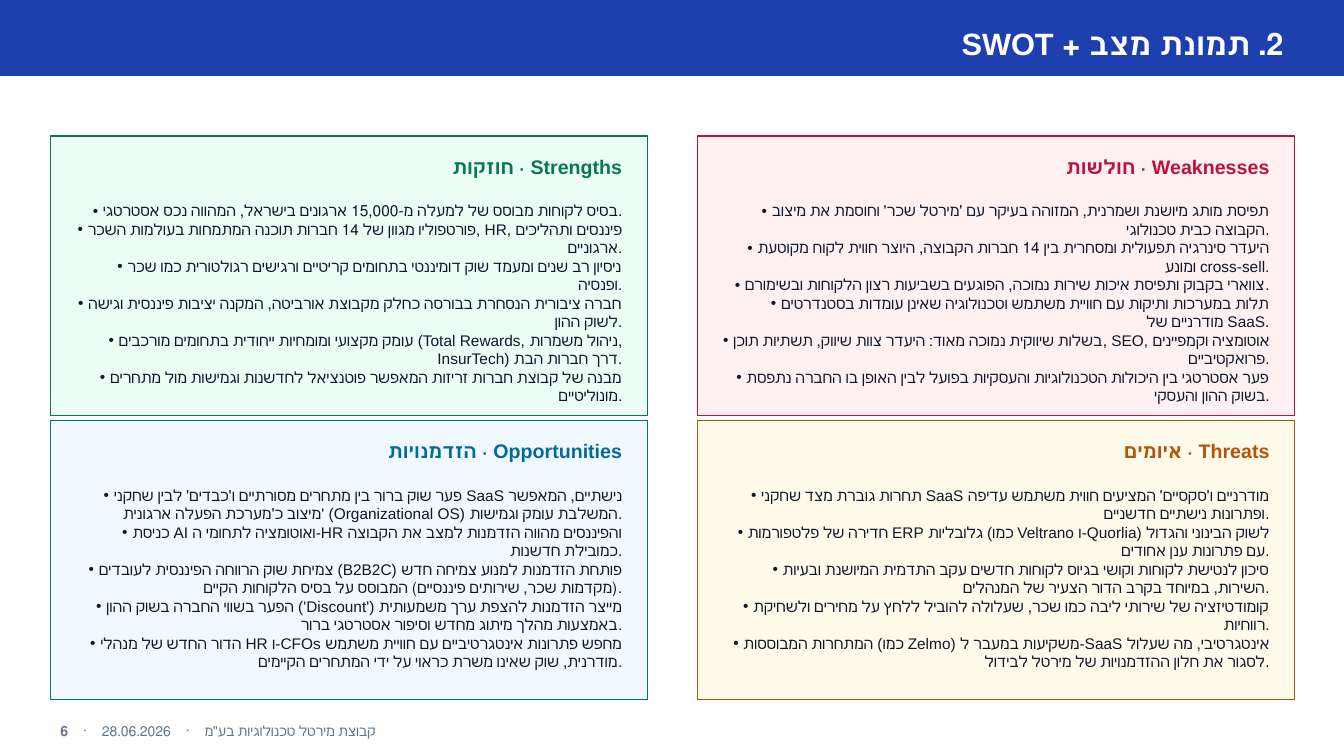
"""Build the SWOT slide: a title bar, four quadrants and a footer."""
from dataclasses import dataclass

from lxml import etree
from pptx import Presentation
from pptx.dml.color import RGBColor
from pptx.enum.shapes import MSO_SHAPE as Preset
from pptx.enum.text import MSO_ANCHOR as Anchor, MSO_AUTO_SIZE as AutoSize, PP_ALIGN as Align
from pptx.oxml.ns import qn
from pptx.util import Inches, Pt

COLORS = {
    "bar": "1E40AF", "white": "FFFFFF", "ink": "0F172A", "footer": "64748B",
    "green": "047857", "green_tint": "ECFDF5",
    "red": "BE123C", "red_tint": "FFF1F2",
    "blue": "0369A1", "blue_tint": "F0F9FF",
    "amber": "B45309", "amber_tint": "FFFBEB",
}
FONT = "Arial"
LEFT, TOP = 0.5, 1.35
COLUMN_STEP, ROW_STEP = 6.42, 2.82
CARD_WIDTH, CARD_HEIGHT = 5.92, 2.77
PADDING = 0.15
BULLET_INDENT = 0.1


@dataclass(frozen=True)
class Quadrant:
    """One SWOT card with its heading and points."""
    heading: str
    color: str
    points: tuple[str, ...]


QUADRANTS = (
    Quadrant("Strengths · חוזקות", "green", (
        "בסיס לקוחות מבוסס של למעלה מ-15,000 ארגונים בישראל, המהווה נכס אסטרטגי.",
        "פורטפוליו מגוון של 14 חברות תוכנה המתמחות בעולמות השכר, HR, פיננסים ותהליכים ארגוניים.",
        "ניסיון רב שנים ומעמד שוק דומיננטי בתחומים קריטיים ורגישים רגולטורית כמו שכר ופנסיה.",
        "חברה ציבורית הנסחרת בבורסה כחלק מקבוצת אורביטה, המקנה יציבות פיננסית וגישה לשוק ההון.",
        "עומק מקצועי ומומחיות ייחודית בתחומים מורכבים (Total Rewards, ניהול משמרות, InsurTech) דרך חברות הבת.",
        "מבנה של קבוצת חברות זריזות המאפשר פוטנציאל לחדשנות וגמישות מול מתחרים מונוליטיים.",
    )),
    Quadrant("Weaknesses · חולשות", "red", (
        "תפיסת מותג מיושנת ושמרנית, המזוהה בעיקר עם 'מירטל שכר' וחוסמת את מיצוב הקבוצה כבית טכנולוגי.",
        "היעדר סינרגיה תפעולית ומסחרית בין 14 חברות הקבוצה, היוצר חווית לקוח מקוטעת ומונע cross-sell.",
        "צווארי בקבוק ותפיסת איכות שירות נמוכה, הפוגעים בשביעות רצון הלקוחות ובשימורם.",
        "תלות במערכות ותיקות עם חוויית משתמש וטכנולוגיה שאינן עומדות בסטנדרטים מודרניים של SaaS.",
        "בשלות שיווקית נמוכה מאוד: היעדר צוות שיווק, תשתיות תוכן, SEO, אוטומציה וקמפיינים פרואקטיביים.",
        "פער אסטרטגי בין היכולות הטכנולוגיות והעסקיות בפועל לבין האופן בו החברה נתפסת בשוק ההון והעסקי.",
    )),
    Quadrant("Opportunities · הזדמנויות", "blue", (
        "פער שוק ברור בין מתחרים מסורתיים ו'כבדים' לבין שחקני SaaS נישתיים, המאפשר מיצוב "
        "כ'מערכת הפעלה ארגונית' (Organizational OS) המשלבת עומק וגמישות.",
        "כניסת AI ואוטומציה לתחומי ה-HR והפיננסים מהווה הזדמנות למצב את הקבוצה כמובילת חדשנות.",
        "צמיחת שוק הרווחה הפיננסית לעובדים (B2B2C) פותחת הזדמנות למנוע צמיחה חדש "
        "(מקדמות שכר, שירותים פיננסיים) המבוסס על בסיס הלקוחות הקיים.",
        "הפער בשווי החברה בשוק ההון ('Discount') מייצר הזדמנות להצפת ערך משמעותית "
        "באמצעות מהלך מיתוג מחדש וסיפור אסטרטגי ברור.",
        "הדור החדש של מנהלי HR ו-CFOs מחפש פתרונות אינטגרטיביים עם חוויית משתמש מודרנית, "
        "שוק שאינו משרת כראוי על ידי המתחרים הקיימים.",
    )),
    Quadrant("Threats · איומים", "amber", (
        "תחרות גוברת מצד שחקני SaaS מודרניים ו'סקסיים' המציעים חווית משתמש עדיפה ופתרונות נישתיים חדשניים.",
        "חדירה של פלטפורמות ERP גלובליות (כמו Veltrano ו-Quorlia) לשוק הבינוני והגדול עם פתרונות ענן אחודים.",
        "סיכון לנטישת לקוחות וקושי בגיוס לקוחות חדשים עקב התדמית המיושנת ובעיות השירות, "
        "במיוחד בקרב הדור הצעיר של המנהלים.",
        "קומודטיזציה של שירותי ליבה כמו שכר, שעלולה להוביל ללחץ על מחירים ולשחיקת רווחיות.",
        "המתחרות המבוססות (כמו Zelmo) משקיעות במעבר ל-SaaS אינטגרטיבי, "
        "מה שעלול לסגור את חלון ההזדמנויות של מירטל לבידול.",
    )),
)
FOOTER = ('קבוצת מירטל טכנולוגיות בע"מ', " ", "·", " ", "28.06.2026", " ", "·", " ", "6")


def rgb(name: str) -> RGBColor:
    """Look up a named colour."""
    return RGBColor.from_string(COLORS[name])


def format_font(font, size: float, color: str, bold: bool = False) -> None:
    """Apply the slide font to a run."""
    font.name, font.size, font.bold = FONT, Pt(size), bold
    font.color.rgb = rgb(color)


def add_box(slide, left: float, top: float, width: float, height: float, fill: str, line: str):
    """Add a filled and outlined rectangle."""
    shape = slide.shapes.add_shape(
        Preset.RECTANGLE, Inches(left), Inches(top), Inches(width), Inches(height))
    shape.shadow.inherit = False
    shape.fill.solid()
    shape.fill.fore_color.rgb = rgb(fill)
    shape.line.color.rgb = rgb(line)
    shape.line.width = Pt(1)
    return shape


def add_text_frame(slide, left: float, top: float, width: float, height: float, anchor: Anchor):
    """Add a wrapping text box and return its frame."""
    text_box = slide.shapes.add_textbox(Inches(left), Inches(top), Inches(width), Inches(height))
    text_box.text_frame.word_wrap = True
    text_box.text_frame.vertical_anchor = anchor
    return text_box.text_frame


def write_heading(text_frame, text: str, size: float, color: str) -> None:
    """Write a bold right-to-left heading."""
    text_frame.text = text
    paragraph = text_frame.paragraphs[0]
    paragraph.alignment = Align.RIGHT
    paragraph._p.get_or_add_pPr().set("rtl", "1")
    format_font(paragraph.runs[0].font, size, color, bold=True)


def add_bullet(paragraph) -> None:
    """Give a paragraph a hanging round bullet."""
    properties = paragraph._p.get_or_add_pPr()
    properties.set("marL", str(Inches(BULLET_INDENT)))
    properties.set("indent", str(-Inches(BULLET_INDENT)))
    etree.SubElement(properties, qn("a:buFont")).set("typeface", FONT)
    etree.SubElement(properties, qn("a:buChar")).set("char", "•")


def add_title(slide) -> None:
    """Add the bar and place the title on it."""
    title = slide.shapes.title
    bar = add_box(slide, 0, 0, 13.33, 0.75, "bar", "bar")
    title.element.addprevious(bar.element)
    title.left, title.top = Inches(LEFT), Inches(0.1)
    title.width, title.height = Inches(12.33), Inches(0.65)
    title.text_frame.auto_size = AutoSize.NONE
    title.text_frame.vertical_anchor = Anchor.MIDDLE
    write_heading(title.text_frame, "2. תמונת מצב + SWOT", 22, "white")


def add_quadrant(slide, quadrant: Quadrant, left: float, top: float) -> None:
    """Draw a card with its heading and bulleted points."""
    add_box(slide, left, top, CARD_WIDTH, CARD_HEIGHT, quadrant.color + "_tint", quadrant.color)
    text_left, text_width = left + PADDING, CARD_WIDTH - 2 * PADDING
    heading = add_text_frame(slide, text_left, top + 0.1, text_width, 0.4, Anchor.MIDDLE)
    write_heading(heading, quadrant.heading, 14, quadrant.color)
    body = add_text_frame(slide, text_left, top + 0.6, text_width, 2.02, Anchor.TOP)
    body.text = "\n".join(quadrant.points)
    for paragraph in body.paragraphs:
        paragraph.alignment = Align.RIGHT
        add_bullet(paragraph)
        format_font(paragraph.runs[0].font, 11, "ink")


def add_footer(slide) -> None:
    """Write the footer with widened spaces around its separators."""
    text_frame = add_text_frame(slide, LEFT, 7.1, 12.33, 0.3, Anchor.MIDDLE)
    for piece in FOOTER:
        run = text_frame.paragraphs[0].add_run()
        run.text = piece
        format_font(run.font, 10, "footer", bold=piece == FOOTER[-1])
        if piece == " ":
            run._r.get_or_add_rPr().set("spc", "830")


def main() -> None:
    """Create and save the presentation."""
    presentation = Presentation()
    presentation.slide_width, presentation.slide_height = Inches(13.33), Inches(7.5)
    slide = presentation.slides.add_slide(presentation.slide_layouts.get_by_name("Title Only"))
    add_title(slide)
    for index, quadrant in enumerate(QUADRANTS):
        row, column = divmod(index, 2)
        add_quadrant(slide, quadrant, LEFT + column * COLUMN_STEP, TOP + row * ROW_STEP)
    add_footer(slide)
    presentation.save("out.pptx")


if __name__ == "__main__":
    main()
